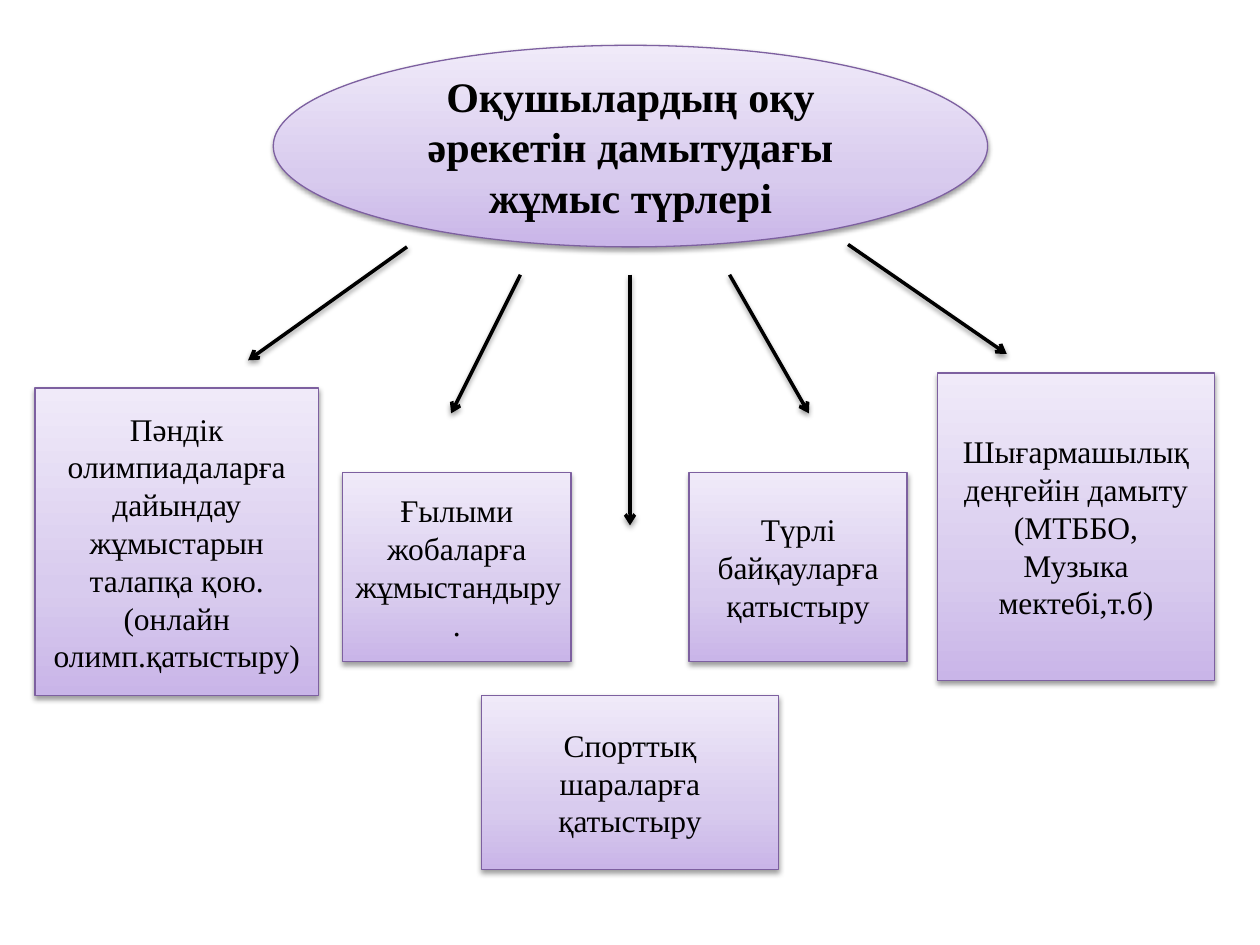
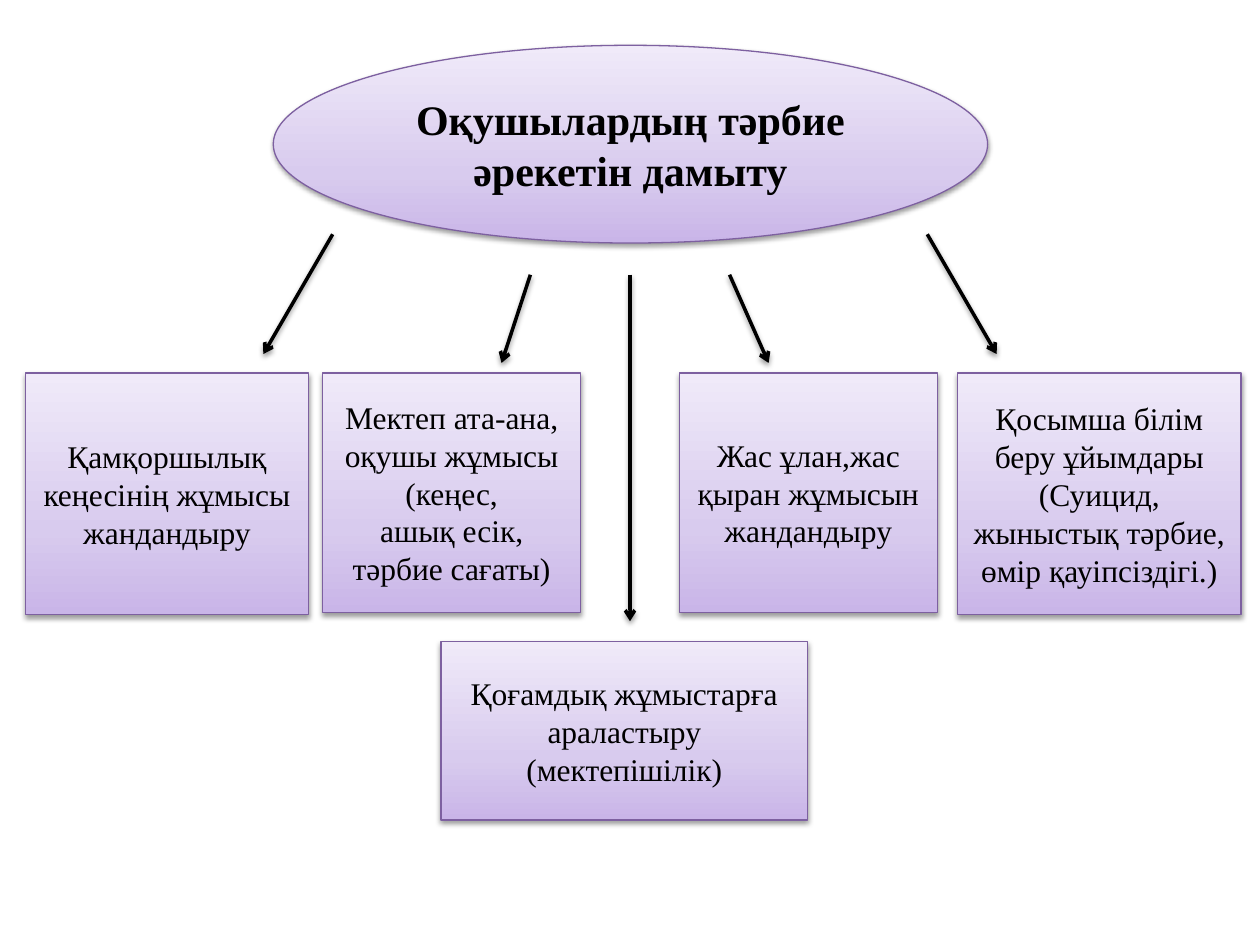
from copy import deepcopy
from dataclasses import dataclass

from lxml import etree
from pptx import Presentation
from pptx.dml.color import RGBColor
from pptx.enum.shapes import MSO_CONNECTOR, MSO_SHAPE
from pptx.enum.text import MSO_ANCHOR, PP_ALIGN
from pptx.oxml.ns import qn
from pptx.util import Pt

OVAL, RECTANGLE = MSO_SHAPE.OVAL, MSO_SHAPE.RECTANGLE
STRAIGHT = MSO_CONNECTOR.STRAIGHT
MIDDLE, CENTER = MSO_ANCHOR.MIDDLE, PP_ALIGN.CENTER


@dataclass(frozen=True)
class Theme:
    font: str = "Times New Roman"
    title_size: float = 24
    text_size: float = 18
    ink: str = "000000"
    outline: str = "7D60A0"
    outline_width: float = 0.75
    arrow_width: float = 2
    gradient: tuple = ((0, "C9B5E8"), (0.35, "D8CBEE"), (1, "F0EAF9"))
    shadow_blur: float = 3.1
    shadow_distance: float = 1.6
    shadow_opacity: int = 38


THEME = Theme()
SLIDE_BOX = (0, 0, 720, 540)
HEADING_LEFT, HEADING_TOP, HEADING_WIDTH = 156.2, 25.9, 408.2


def add_soft_shadow(properties):
    """Replace any effects in the shape properties with a shadow straight below."""
    effects = properties.find(qn("a:effectLst"))
    if effects is None:
        effects = etree.SubElement(properties, qn("a:effectLst"))
    shadow = etree.SubElement(
        effects, qn("a:outerShdw"),
        blurRad=str(int(Pt(THEME.shadow_blur))),
        dist=str(int(Pt(THEME.shadow_distance))),
        dir="5400000", rotWithShape="0")
    color = etree.SubElement(shadow, qn("a:srgbClr"), val=THEME.ink)
    etree.SubElement(color, qn("a:alpha"), val=str(THEME.shadow_opacity * 1000))


def fill_with_gradient(shape):
    """Shade the shape from dark at its foot to light at its top."""
    shape.fill.gradient()
    shape.fill.gradient_angle = 90
    stops = shape._element.spPr.find(qn("a:gradFill")).find(qn("a:gsLst"))
    while len(stops) < len(THEME.gradient):
        stops.append(deepcopy(stops[0]))
    for stop, (position, color) in zip(shape.fill.gradient_stops, THEME.gradient):
        stop.position = position
        stop.color.rgb = RGBColor.from_string(color)


def write_centered(shape, lines, size, bold):
    frame = shape.text_frame
    frame.word_wrap = True
    frame.vertical_anchor = MIDDLE
    for index, line in enumerate(lines):
        paragraph = frame.add_paragraph() if index else frame.paragraphs[0]
        paragraph.alignment = CENTER
        run = paragraph.add_run()
        run.text = line
        run.font.name = THEME.font
        run.font.size = Pt(size)
        run.font.bold = bold
        run.font.color.rgb = RGBColor.from_string(THEME.ink)


def add_node(slide, kind, box, lines, size=THEME.text_size, bold=False):
    shape = slide.shapes.add_shape(kind, *map(Pt, box))
    fill_with_gradient(shape)
    shape.line.color.rgb = RGBColor.from_string(THEME.outline)
    shape.line.width = Pt(THEME.outline_width)
    shape.shadow.inherit = False
    add_soft_shadow(shape._element.spPr)
    write_centered(shape, lines, size, bold)


def add_arrow(slide, start, end):
    arrow = slide.shapes.add_connector(STRAIGHT, *map(Pt, (*start, *end)))
    arrow.line.color.rgb = RGBColor.from_string(THEME.ink)
    arrow.line.width = Pt(THEME.arrow_width)
    properties = arrow._element.spPr
    etree.SubElement(properties.find(qn("a:ln")), qn("a:tailEnd"), type="arrow")
    add_soft_shadow(properties)


def add_branch_diagram(slide, box, heading, heading_height, arrows, branches):
    """Draw a heading oval with arrows fanning out to boxes, all offset from box."""
    left, top = box[:2]
    heading_box = (left + HEADING_LEFT, top + HEADING_TOP, HEADING_WIDTH, heading_height)
    add_node(slide, OVAL, heading_box, [heading], THEME.title_size, bold=True)
    for start, end in arrows:
        add_arrow(slide, *((left + x, top + y) for x, y in (start, end)))
    for (x, y, width, height), lines in branches:
        add_node(slide, RECTANGLE, (left + x, top + y, width, height), lines)


LEARNING = dict(
    heading="Оқушылардың оқу әрекетін дамытудағы жұмыс түрлері",
    heading_height=115.2,
    arrows=[
        ((232.6, 141.1), (141.8, 205.9)),
        ((297.4, 157), (257.8, 236.2)),
        ((360, 157), (360, 300.2)),
        ((416.9, 157), (462.2, 236.2)),
        ((484.6, 139.7), (575.3, 202.3)),
    ],
    branches=[
        ((20, 221.8, 162, 175.7),
         ["Пәндік олимпиадаларға дайындау жұмыстарын талапқа қою.",
          "(онлайн олимп.қатыстыру)"]),
        ((195.8, 270, 130.5, 108), ["Ғылыми жобаларға жұмыстандыру."]),
        ((275, 397.4, 170, 99.4), ["Спорттық шараларға қатыстыру"]),
        ((393.8, 270, 124.6, 108), ["Түрлі байқауларға қатыстыру"]),
        ((535.7, 213.1, 158.4, 175.7),
         ["Шығармашылық деңгейін дамыту (МТББО,", "Музыка мектебі,т.б)"]),
    ],
)

UPBRINGING = dict(
    heading="Оқушылардың тәрбие әрекетін дамыту",
    heading_height=113,
    arrows=[
        ((190.1, 133.9), (150.5, 202.3)),
        ((303.1, 157), (286.6, 207.4)),
        ((360, 157), (360, 355)),
        ((416.9, 157), (439.2, 207.4)),
        ((529.9, 133.9), (569.5, 202.3)),
    ],
    branches=[
        ((14.4, 213.1, 162, 138.2), ["Қамқоршылық кеңесінің жұмысы жандандыру"]),
        ((184.3, 213.1, 147.6, 136.8),
         ["Мектеп ата-ана,", "оқушы жұмысы (кеңес,", "ашық есік,", "тәрбие сағаты)"]),
        ((388.1, 213.1, 147.6, 136.8), ["Жас ұлан,жас қыран жұмысын жандандыру"]),
        ((547.2, 213.1, 162, 138.2),
         ["Қосымша білім беру ұйымдары (Суицид, жыныстық тәрбие, өмір қауіпсіздігі.)"]),
        ((252, 366.5, 209.5, 102.2),
         ["Қоғамдық жұмыстарға араластыру (мектепішілік)"]),
    ],
)


def main():
    presentation = Presentation()
    presentation.slide_width, presentation.slide_height = map(Pt, SLIDE_BOX[2:])
    blank_layout = presentation.slide_layouts[6]
    for diagram in (LEARNING, UPBRINGING):
        add_branch_diagram(presentation.slides.add_slide(blank_layout), SLIDE_BOX, **diagram)
    presentation.save("out.pptx")


if __name__ == "__main__":
    main()
